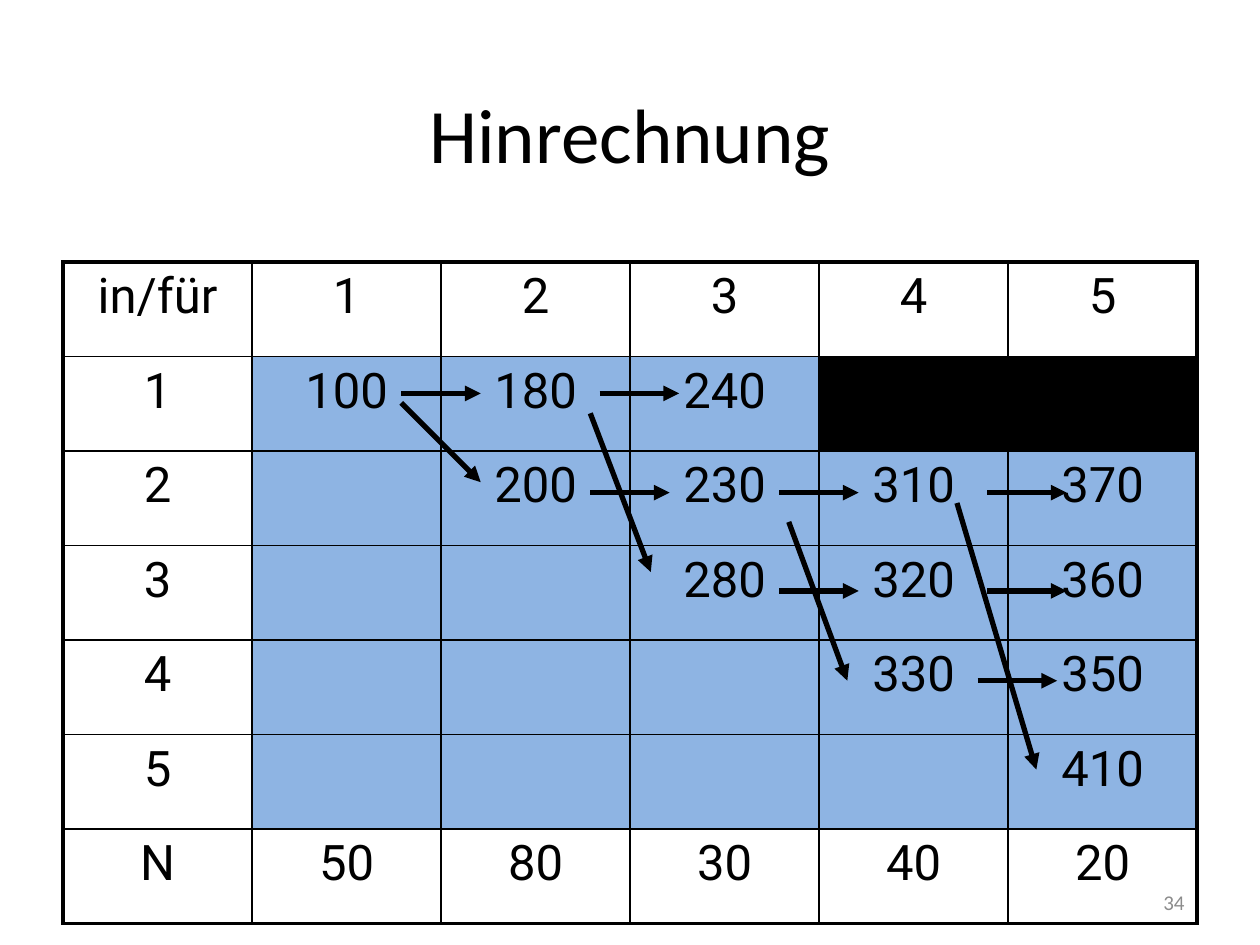
from dataclasses import dataclass

from lxml import etree
from pptx import Presentation
from pptx.dml.color import RGBColor
from pptx.enum.shapes import MSO_CONNECTOR
from pptx.enum.text import MSO_ANCHOR, PP_ALIGN
from pptx.oxml.ns import qn
from pptx.util import Inches, Pt

LINE = MSO_CONNECTOR.STRAIGHT
MIDDLE = MSO_ANCHOR.MIDDLE
CENTER, RIGHT = PP_ALIGN.CENTER, PP_ALIGN.RIGHT
TITLE_ONLY = 5


@dataclass(frozen=True)
class Theme:
    black: str = "000000"
    white: str = "FFFFFF"
    blue: str = "8EB4E3"
    gray: str = "8C8C8C"
    head: str = "Calibri"
    body: str = "Roboto"
    title: int = 44
    cell: int = 28
    note: int = 12
    thin: float = 1
    edge: float = 2.25
    arrow: float = 3


@dataclass(frozen=True)
class Grid:
    """Table grid in inches; points are given in columns and rows."""
    left: float = 0.5
    top: float = 2.08
    col: float = 1.5
    row: float = 0.75

    def place(self, x, y):
        return Inches(self.left + x * self.col), Inches(self.top + y * self.row)

    def size(self, cols, rows):
        return Inches(cols * self.col), Inches(rows * self.row)


class Board:
    def __init__(self, deck, theme, grid):
        self.deck, self.theme, self.grid = deck, theme, grid
        self.slide = deck.slides.add_slide(deck.slide_layouts[TITLE_ONLY])

    def box(self, x, y, w, h):
        """Turn shares of the slide into lengths."""
        wide, high = self.deck.slide_width, self.deck.slide_height
        return int(x * wide), int(y * high), int(w * wide), int(h * high)

    def label(self, frame, text, face, size, color, align):
        frame.text = text
        para = frame.paragraphs[0]
        para.alignment = align
        para.font.name, para.font.size = face, Pt(size)
        para.font.color.rgb = RGBColor.from_string(color)

    def title(self, text, area):
        look, shape = self.theme, self.slide.shapes.title
        shape.left, shape.top, shape.width, shape.height = self.box(*area)
        shape.text_frame.vertical_anchor = MIDDLE
        self.label(shape.text_frame, text, look.head, look.title, look.black, CENTER)

    def note(self, text, area):
        look = self.theme
        frame = self.slide.shapes.add_textbox(*self.box(*area)).text_frame
        frame.word_wrap = True
        frame.vertical_anchor = MIDDLE
        self.label(frame, text, look.head, look.note, look.gray, RIGHT)

    def border(self, cell, side, width):
        props = cell._tc.get_or_add_tcPr()
        line = etree.SubElement(props, qn(f"a:ln{side}"), w=str(Pt(width)))
        fill = etree.SubElement(line, qn("a:solidFill"))
        etree.SubElement(fill, qn("a:srgbClr"), val=self.theme.black)

    def table(self, data, color):
        """Draw rows of text; color(row, col) gives each cell's fill."""
        look, rows, cols = self.theme, len(data), len(data[0])
        table = self.slide.shapes.add_table(
            rows, cols, *self.grid.place(0, 0), *self.grid.size(cols, rows)).table
        table.first_row = table.horz_banding = False
        for r, texts in enumerate(data):
            for c, text in enumerate(texts):
                cell = table.cell(r, c)
                outer = {"L": c == 0, "R": c == cols - 1,
                         "T": r == 0, "B": r == rows - 1}
                for side, edge in outer.items():
                    self.border(cell, side, look.edge if edge else look.thin)
                cell.fill.solid()
                cell.fill.fore_color.rgb = RGBColor.from_string(color(r, c))
                self.label(cell.text_frame, text, look.body, look.cell,
                           look.black, CENTER)

    def arrow(self, start, end):
        look = self.theme
        link = self.slide.shapes.add_connector(
            LINE, *self.grid.place(*start), *self.grid.place(*end))
        link.line.width = Pt(look.arrow)
        link.line.color.rgb = RGBColor.from_string(look.black)
        props = link._element.spPr
        etree.SubElement(props.find(qn("a:ln")), qn("a:tailEnd"), type="triangle")
        etree.SubElement(props, qn("a:effectLst"))


COSTS = [
    ["in/für", "1", "2", "3", "4", "5"],
    ["1", "100", "180", "240", "", ""],
    ["2", "", "200", "230", "310", "370"],
    ["3", "", "", "280", "320", "360"],
    ["4", "", "", "", "330", "350"],
    ["5", "", "", "", "", "410"],
    ["N", "50", "80", "30", "40", "20"],
]
BLOCKED = {(1, 4), (1, 5)}
STEP = 0.42
HOLD = [(1.79, 1.39), (2.84, 1.39), (2.79, 2.44), (3.79, 2.44),
        (3.79, 3.48), (4.89, 2.44), (4.89, 3.48), (4.84, 4.43)]
ORDER = [((1.79, 1.49), (2.21, 2.33)), ((2.79, 1.6), (3.11, 3.28)),
         ((3.84, 2.75), (4.15, 4.43)), ((4.73, 2.55), (5.15, 5.37))]


def main():
    deck = Presentation()
    deck.slide_width, deck.slide_height = Inches(10), Inches(7.5)
    theme = Theme()
    board = Board(deck, theme, Grid())

    def shade(row, col):
        if (row, col) in BLOCKED:
            return theme.black
        inner = 0 < row < len(COSTS) - 1 and col > 0
        return theme.blue if inner else theme.white

    board.title("Hinrechnung", (0.05, 0.04, 0.9, 0.2))
    board.table(COSTS, shade)
    for x, y in HOLD:
        board.arrow((x, y), (x + STEP, y))
    for start, end in ORDER:
        board.arrow(start, end)
    board.note("34", (0.72, 0.93, 0.23, 0.05))
    deck.save("out.pptx")


if __name__ == "__main__":
    main()
